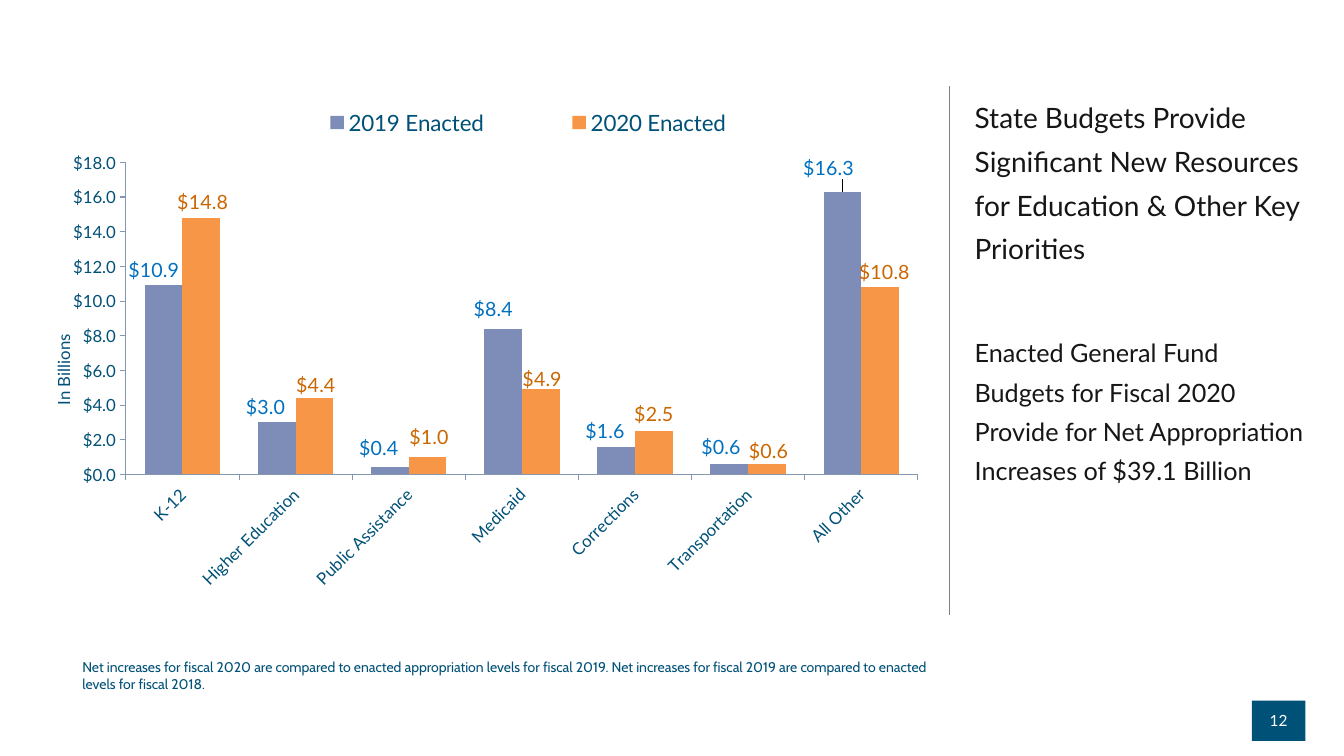
from dataclasses import dataclass

from pptx import Presentation
from pptx import util as u
from pptx.chart import data as chart_data
from pptx.dml.color import RGBColor
from pptx.enum import chart as ch, shapes, text
from pptx.oxml import parse_xml
from pptx.oxml.ns import nsdecls

Pt = u.Pt


@dataclass(frozen=True)
class Theme:
    navy: str = "005177"
    ink: str = "161616"
    white: str = "FFFFFF"
    rule: str = "7F7F7F"
    axis: str = "8496B0"
    bars: tuple = ("7E8DB8", "F79646")
    labels: tuple = ("0070C0", "CC6600")
    body_font: str = "Lato"
    note_font: str = "Cabin"
    headline: int = 20
    subhead: int = 18
    legend: int = 16
    label: int = 14
    axis_text: int = 12
    number: int = 11
    note: int = 10


THEME = Theme()
MONEY = '"$"#,##0.0'
CHART_BOX = (28, 62, 638.6, 425.5)
CATEGORIES = ["K-12", "Higher Education", "Public Assistance", "Medicaid",
              "Corrections", "Transportation", "All Other"]
# Each series: its values, and the shift in points of each value label
SERIES = {
    "2019 Enacted": (
        [10.9, 3, 0.4, 8.4, 1.6, 0.6, 16.3],
        [(-7, 0), (-8, 0), (-8, -3), (-7, -3), (-8, 0), (-6, -1), (-10, -6)]),
    "2020 Enacted": (
        [14.8, 4.4, 1, 4.9, 2.5, 0.6, 10.8],
        [(1, 0), (1, 2), (1, -3), (1, 4), (0, -1), (1, 2), (3, 0)]),
}


def style_font(font, size, color, name=THEME.body_font):
    font.size = Pt(size)
    font.name = name
    font.bold = False
    font.color.rgb = RGBColor.from_string(color)


def write_text(frame, content, size, color, name=THEME.body_font, new=False,
               align=text.PP_ALIGN.LEFT, line_spacing=None, space_before=0):
    """Write one paragraph: the frame's first, or a new one after the others."""
    paragraph = frame.add_paragraph() if new else frame.paragraphs[0]
    paragraph.alignment = align
    paragraph.line_spacing = line_spacing
    paragraph.space_before = Pt(space_before)
    run = paragraph.add_run()
    run.text = content
    style_font(run.font, size, color, name)


def place(shape, left, top, width, height):
    shape.left, shape.top = Pt(left), Pt(top)
    shape.width, shape.height = Pt(width), Pt(height)


def set_layout(parent, index, x, y, w=None, h=None, mode="edge", inner=False):
    """Give a chart part a manual layout, in fractions of the chart."""
    for old in parent.xpath("c:layout"):
        parent.remove(old)
    target = '<c:layoutTarget val="inner"/>' if inner else ""
    modes = "" if mode == "factor" else (
        '<c:xMode val="edge"/><c:yMode val="edge"/>')
    sizes = {"x": x, "y": y, "w": w, "h": h}
    values = "".join(f'<c:{key} val="{value:.4f}"/>'
                     for key, value in sizes.items() if value is not None)
    parent.insert(index, parse_xml(
        f'<c:layout {nsdecls("c")}><c:manualLayout>{target}{modes}{values}'
        '</c:manualLayout></c:layout>'))


def add_title(slide):
    title = slide.shapes.title
    place(title, 689, 61.2, 252, 378)
    frame = title.text_frame
    frame.word_wrap = True
    frame.auto_size = text.MSO_AUTO_SIZE.NONE
    frame.vertical_anchor = text.MSO_ANCHOR.TOP
    write_text(frame, "State Budgets Provide Significant New Resources for "
               "Education & Other Key Priorities",
               THEME.headline, THEME.ink, line_spacing=1.3)
    write_text(frame, "Enacted General Fund Budgets for Fiscal 2020 Provide "
               "for Net Appropriation Increases of $39.1 Billion",
               THEME.subhead, THEME.ink, new=True, line_spacing=1.3,
               space_before=45)


def add_rule(slide):
    rule = slide.shapes.add_connector(
        shapes.MSO_CONNECTOR.STRAIGHT, Pt(678.2), Pt(439.2), Pt(678.2), Pt(61.2))
    rule.line.color.rgb = RGBColor.from_string(THEME.rule)
    rule.line.width = Pt(0.5)
    rule._element.spPr.append(parse_xml(f'<a:effectLst {nsdecls("a")}/>'))


def add_page_number(slide, number):
    box = slide.shapes.add_shape(shapes.MSO_SHAPE.RECTANGLE,
                                 Pt(894.2), Pt(500.4), Pt(38.2), Pt(28.8))
    box.shadow.inherit = False
    box.fill.solid()
    box.fill.fore_color.rgb = RGBColor.from_string(THEME.navy)
    box.line.fill.background()
    box.text_frame.vertical_anchor = text.MSO_ANCHOR.MIDDLE
    write_text(box.text_frame, number, THEME.number, THEME.white,
               align=text.PP_ALIGN.CENTER)


def add_footnote(slide, content):
    box = slide.shapes.add_textbox(Pt(51.8), Pt(466.6), Pt(631.4), Pt(31.7))
    box.text_frame.word_wrap = True
    box.text_frame.auto_size = text.MSO_AUTO_SIZE.SHAPE_TO_FIT_TEXT
    write_text(box.text_frame, content, THEME.note, THEME.navy, THEME.note_font)


def style_axis(axis):
    axis.has_major_gridlines = False
    axis.major_tick_mark = ch.XL_TICK_MARK.OUTSIDE
    axis.minor_tick_mark = ch.XL_TICK_MARK.NONE
    axis.format.line.color.rgb = RGBColor.from_string(THEME.axis)
    axis.format.line.width = Pt(0.75)
    style_font(axis.tick_labels.font, THEME.axis_text, THEME.navy)


def style_series(series, bar_color, label_color, shifts):
    series.format.fill.solid()
    series.format.fill.fore_color.rgb = RGBColor.from_string(bar_color)
    series.invert_if_negative = False
    labels = series.data_labels
    labels.show_value = True
    labels.number_format, labels.number_format_is_linked = MONEY, False
    labels.position = ch.XL_LABEL_POSITION.OUTSIDE_END
    style_font(labels.font, THEME.label, label_color)
    for index in range(len(shifts)):
        label = series.points[index].data_label
        style_font(label.font, THEME.label, label_color)
        label.position = ch.XL_LABEL_POSITION.OUTSIDE_END
    for element, (dx, dy) in zip(series._element.xpath("c:dLbls/c:dLbl"), shifts):
        set_layout(element, 1, dx / CHART_BOX[2], dy / CHART_BOX[3], mode="factor")
        number_format = parse_xml(f'<c:numFmt {nsdecls("c")} sourceLinked="0"/>')
        number_format.set("formatCode", MONEY)
        element.insert(2, number_format)


def add_budget_chart(slide):
    data = chart_data.CategoryChartData(number_format=MONEY)
    data.categories = CATEGORIES
    for name, (values, _) in SERIES.items():
        data.add_series(name, values)
    chart = slide.shapes.add_chart(ch.XL_CHART_TYPE.COLUMN_CLUSTERED,
                                   *map(Pt, CHART_BOX), data).chart
    chart.has_title = False
    style_font(chart.font, THEME.axis_text, THEME.navy)
    plot = chart.plots[0]
    plot.gap_width, plot.overlap, plot.vary_by_categories = 100, 0, False
    for series, bar, label in zip(plot.series, THEME.bars, THEME.labels):
        style_series(series, bar, label, SERIES[series.name][1])

    categories, amounts = chart.category_axis, chart.value_axis
    for axis in (categories, amounts):
        style_axis(axis)
    categories.tick_label_position = ch.XL_TICK_LABEL_POSITION.LOW
    categories._element.xpath("c:txPr/a:bodyPr")[0].set("rot", "-2700000")
    amounts.minimum_scale, amounts.maximum_scale, amounts.major_unit = 0, 18, 2
    amounts.tick_labels.number_format = MONEY
    amounts.tick_labels.number_format_is_linked = False
    title_frame = amounts.axis_title.text_frame
    write_text(title_frame, "In Billions", THEME.axis_text, THEME.navy)
    title = amounts._element.xpath("c:title")[0]
    title.xpath("c:tx/c:rich/a:bodyPr")[0].set("rot", "-5400000")
    set_layout(title, 1, 0.01, 0.41)

    chart.has_legend = True
    chart.legend.position = ch.XL_LEGEND_POSITION.RIGHT
    chart.legend.include_in_layout = True
    style_font(chart.legend.font, THEME.legend, THEME.navy)
    set_layout(chart.legend._element, 1, 0.235, 0.03, 0.624, 0.06)
    set_layout(plot._element.getparent(), 0, 0.097, 0.127, 0.886, 0.524, inner=True)


def main():
    presentation = Presentation()
    presentation.slide_width, presentation.slide_height = Pt(960), Pt(540)
    slide = presentation.slides.add_slide(presentation.slide_layouts[5])
    add_rule(slide)
    add_title(slide)
    add_page_number(slide, "12")
    add_budget_chart(slide)
    add_footnote(slide, "Net increases for fiscal 2020 are compared to enacted "
                 "appropriation levels for fiscal 2019. Net increases for fiscal "
                 "2019 are compared to enacted levels for fiscal 2018.")
    presentation.save("out.pptx")


if __name__ == "__main__":
    main()
